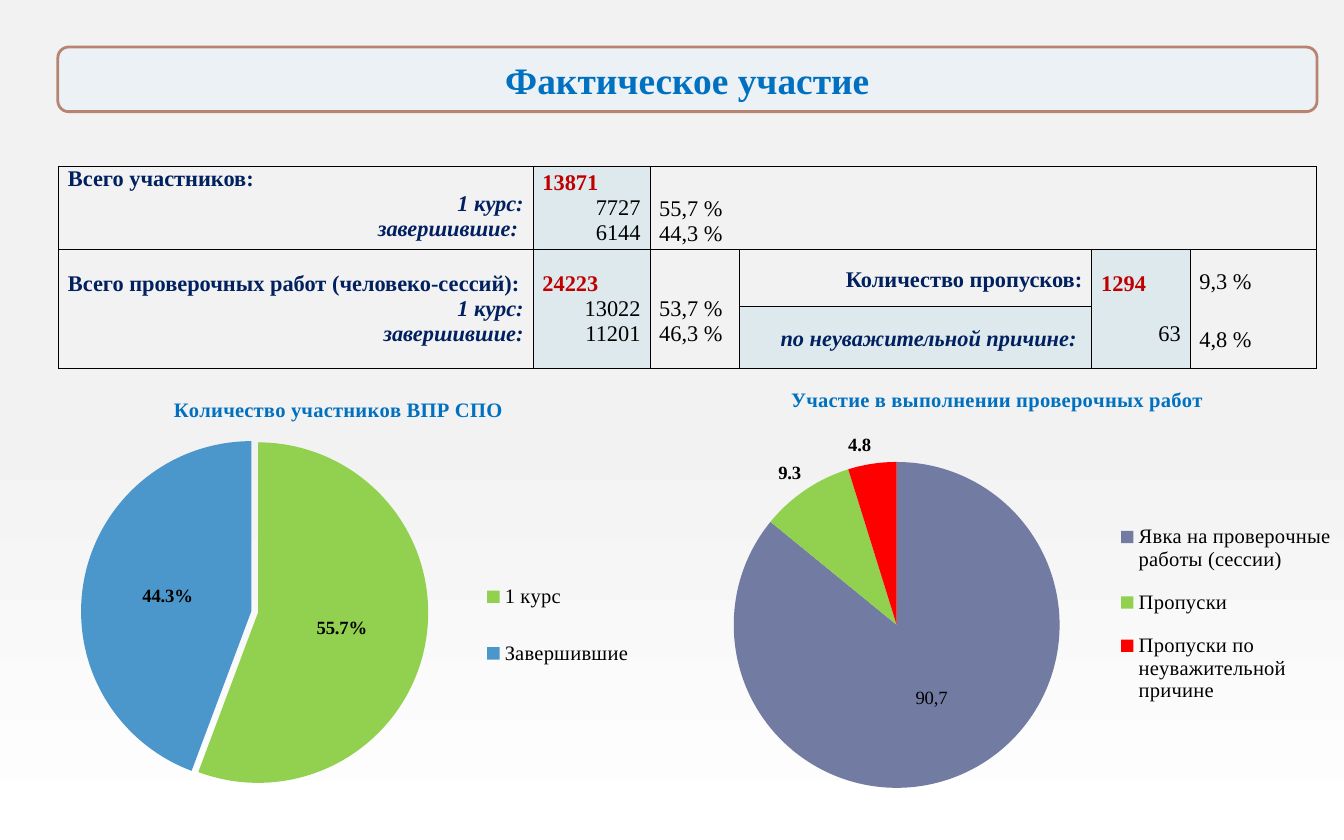
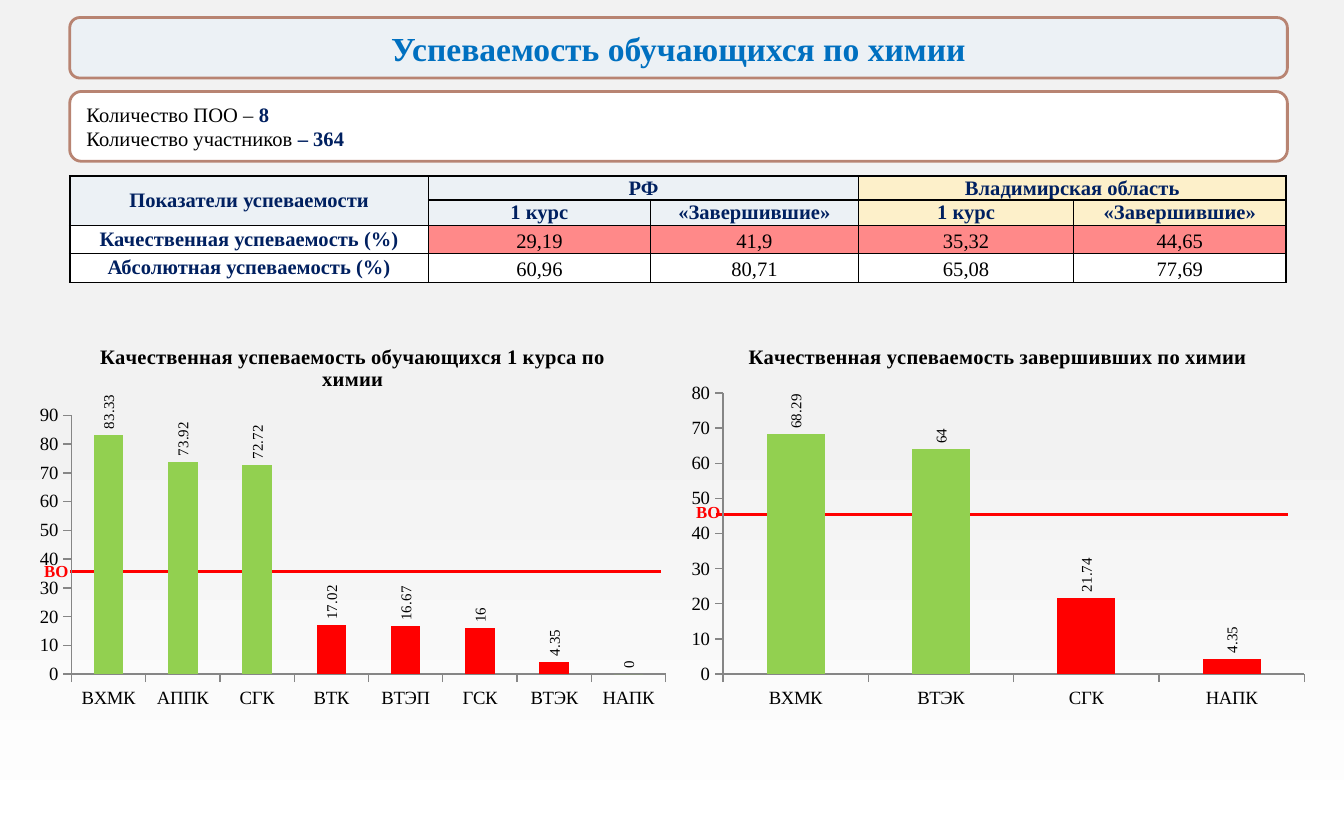
from lxml import etree
from pptx import Presentation
from pptx.chart.data import CategoryChartData
from pptx.dml.color import RGBColor
from pptx.enum.chart import XL_CHART_TYPE, XL_LABEL_POSITION, XL_LEGEND_POSITION, XL_TICK_MARK
from pptx.enum.shapes import MSO_CONNECTOR, MSO_SHAPE
from pptx.enum.text import MSO_ANCHOR, PP_ALIGN
from pptx.oxml import parse_xml
from pptx.oxml.ns import nsdecls, qn
from pptx.util import Pt

FONT = "Times New Roman"
BLUE, NAVY, CRIMSON, BLACK, WHITE = "0070C0", "002060", "C00000", "000000", "FFFFFF"
RED, GREEN, SKY, SLATE, GREY = "FF0000", "92D050", "4B97CB", "727CA3", "868686"
BAND, FRAME, TINT, CREAM, PINK = "ECF1F5", "B88472", "DDE9EC", "FDF0CA", "FF8989"
BACKDROP = [(0, "F2F2F2"), (50, "F2F2F2"), (100, WHITE)]
ALIGN = {"l": PP_ALIGN.LEFT, "c": PP_ALIGN.CENTER, "r": PP_ALIGN.RIGHT, "j": PP_ALIGN.JUSTIFY}

# Line styles: colour, bold, italic
HEAD, SUB = (NAVY, True, False), (NAVY, True, True)
TOTAL, PLAIN = (CRIMSON, True, False), (BLACK, False, False)


# Cell content: lines are (text, align, style)
def cell(lines, fill=None, span=(1, 1), **opts):
    return dict(lines=lines, fill=fill, span=span, **opts)


def group(title):
    return [(title, "j", HEAD), ("1 курс:", "r", SUB)]


def counts(total, first, last):
    return [(total, "j", TOTAL), (first, "r", PLAIN), (last, "r", PLAIN)]


def shares(*values):
    return [(v, "l", PLAIN) for v in values]


ATTENDANCE = {
    (0, 0): cell(group("Всего участников: ") + [("завершившие: ", "r", SUB)], anchor=MSO_ANCHOR.TOP),
    (0, 1): cell(counts("13871", " 7727", "6144"), TINT),
    (0, 2): cell(shares("55,7 %", "44,3 %"), span=(1, 4), top=13.8),
    (1, 0): cell(group("Всего проверочных работ (человеко-сессий):")
                 + [("завершившие:", "r", SUB)], span=(2, 1)),
    (1, 1): cell(counts("24223", "13022", "11201"), TINT, (2, 1)),
    (1, 2): cell(shares("53,7 %", "46,3 %"), span=(2, 1), top=13.8),
    (1, 3): cell([("Количество пропусков:", "r", HEAD)], spacing=1.15),
    (1, 4): cell([("1294", "l", TOTAL), ("63", "r", PLAIN)], TINT, (2, 1), gap=13.8),
    (1, 5): cell(shares("9,3 %", "4,8 %"), span=(2, 1), spacing=1.15, gap=15.9),
    (2, 3): cell([("по неуважительной причине: ", "r", SUB)], TINT, spacing=1.15),
}

REGIONS = [("РФ", BAND), ("Владимирская область", CREAM)]
COURSES = ["1 курс", "«Завершившие»"]
RATES = [
    ("Качественная успеваемость (%)", ["29,19", "41,9", "35,32", "44,65"], PINK),
    ("Абсолютная успеваемость (%)", ["60,96", "80,71", "65,08", "77,69"], WHITE),
]

# Point labels: (own text or None, position, bold)
PIES = [
    dict(title="Количество участников ВПР СПО", box=(8.6, 202.3, 345.6, 232.6),
         cats=["1 курс", "Завершившие"], vals=[0.557, 0.443], colors=[GREEN, SKY],
         fmt="0.0%", explode=2, plot=(0.1, 0.14, 0.54, 0.8), legend=(0.69, 0.4, 0.3, 0.34),
         labels=[(None, "CENTER", True)] * 2),
    dict(title="Участие в выполнении проверочных работ", box=(348.5, 196.6, 371.5, 238.3),
         cats=["Явка на проверочные работы (сессии)", "Пропуски",
               "Пропуски по неуважительной причине"],
         vals=[85.9, 9.3, 4.8], colors=[SLATE, GREEN, RED],
         fmt="General", explode=0, plot=(0.12, 0.18, 0.47, 0.8), legend=(0.67, 0.31, 0.32, 0.49),
         labels=[("90,7", "CENTER", False)] + [(None, "OUTSIDE_END", True)] * 2),
]

# average: line from x to x at y; tag: place of its label
BARS = [
    dict(title="Качественная успеваемость обучающихся 1 курса по химии",
         box=(14.4, 174.2, 349.2, 209.5), average=(37.4, 354.2, 306), tag=(16.6, 296.6),
         cats=["ВХМК", "АППК", "СГК", "ВТК", "ВТЭП", "ГСК", "ВТЭК", "НАПК"],
         vals=[83.33, 73.92, 72.72, 17.02, 16.67, 16, 4.35, 0], limit=35.32),
    dict(title="Качественная успеваемость завершивших по химии",
         box=(363.6, 174.2, 342, 209.5), average=(383.8, 689.8, 275.8), tag=(365.8, 265),
         cats=["ВХМК", "ВТЭК", "СГК", "НАПК"],
         vals=[68.29, 64, 21.74, 4.35], limit=44.65),
]


def rgb(hexa):
    return RGBColor.from_string(hexa)


def pts(values):
    return [Pt(v) for v in values]


def style_font(font, size, color=BLACK, bold=False, italic=False):
    font.name, font.size, font.bold, font.italic = FONT, Pt(size), bold, italic
    font.color.rgb = rgb(color)


def new_slide(prs):
    s = prs.slides.add_slide(prs.slide_layouts[6])
    fill = s.background.fill
    fill.gradient()
    fill.gradient_angle = 270
    stops = next(s.element.iter(qn("a:gsLst")))
    for stop in list(stops):
        stops.remove(stop)
    for pos, color in BACKDROP:
        gs = etree.SubElement(stops, qn("a:gs"), pos=str(pos * 1000))
        etree.SubElement(gs, qn("a:srgbClr"), val=color)
    return s


def add_panel(s, box, fill, paragraphs, size, align):
    """Framed rounded panel; each paragraph is a list of (text, style)."""
    sp = s.shapes.add_shape(MSO_SHAPE.ROUNDED_RECTANGLE, *pts(box))
    sp.shadow.inherit = False
    sp.fill.solid()
    sp.fill.fore_color.rgb = rgb(fill)
    sp.line.color.rgb, sp.line.width = rgb(FRAME), Pt(1.5)
    tf = sp.text_frame
    tf.word_wrap, tf.vertical_anchor = True, MSO_ANCHOR.MIDDLE
    for i, runs in enumerate(paragraphs):
        p = tf.add_paragraph() if i else tf.paragraphs[0]
        p.alignment = ALIGN[align]
        for text, style in runs:
            r = p.add_run()
            r.text = text
            style_font(r.font, size, *style)


def add_borders(tc, width):
    pr = tc.get_or_add_tcPr()
    for i, side in enumerate("LRTB"):
        pr.insert(i, parse_xml(
            f'<a:ln{side} {nsdecls("a")} w="{Pt(width)}"><a:solidFill>'
            f'<a:srgbClr val="{BLACK}"/></a:solidFill></a:ln{side}>'))


def add_grid(s, box, cols, rows, cells, size, border):
    tbl = s.shapes.add_table(len(rows), len(cols), *pts(box)).table
    tbl.first_row = tbl.horz_banding = False
    for col, width in zip(tbl.columns, cols):
        col.width = Pt(width)
    for row, height in zip(tbl.rows, rows):
        row.height = Pt(height)
    for c in tbl.iter_cells():
        c.fill.background()
        add_borders(c._tc, border)
    for (row, col), d in cells.items():
        c = tbl.cell(row, col)
        height, width = d["span"]
        if d["span"] != (1, 1):
            c.merge(tbl.cell(row + height - 1, col + width - 1))
        if d["fill"]:
            c.fill.solid()
            c.fill.fore_color.rgb = rgb(d["fill"])
        c.margin_left = c.margin_right = Pt(5)
        c.margin_top, c.margin_bottom = Pt(d.get("top", 0)), 0
        c.vertical_anchor = d.get("anchor", MSO_ANCHOR.MIDDLE)
        c.text_frame.text = "\n".join(text for text, _, _ in d["lines"])
        for i, (p, (_, align, style)) in enumerate(zip(c.text_frame.paragraphs, d["lines"])):
            p.alignment = ALIGN[align]
            p.line_spacing = d.get("spacing", 1.0)
            if i and "gap" in d:
                p.space_before = Pt(d["gap"])
            style_font(p.runs[0].font, size, *style)


def add_titled_chart(s, kind, d, color):
    data = CategoryChartData()
    data.categories = d["cats"]
    data.add_series("Series 1", d["vals"])
    chart = s.shapes.add_chart(kind, *pts(d["box"]), data).chart
    style_font(chart.font, 10)
    chart.has_legend = False
    chart.has_title = True
    tf = chart.chart_title.text_frame
    tf.text = d["title"]
    style_font(tf.paragraphs[0].runs[0].font, 11, color, True)
    chart.chart_title.include_in_layout = False
    # Transparent chart area
    area = parse_xml(f'<c:spPr {nsdecls("c", "a")}><a:noFill/><a:ln><a:noFill/></a:ln></c:spPr>')
    chart.element.find(qn("c:chart")).addnext(area)
    return chart


def place(parent, box, inner=False):
    """Manual layout of a plot area or legend, as shares of the chart."""
    old = parent.find(qn("c:layout"))
    if old is not None:
        parent.remove(old)
    values = [("layoutTarget", "inner")] if inner else []
    values += [("xMode", "edge"), ("yMode", "edge"), *zip("xywh", box)]
    tags = "".join(f'<c:{k} val="{v}"/>' for k, v in values)
    layout = parse_xml(f'<c:layout {nsdecls("c")}><c:manualLayout>{tags}</c:manualLayout></c:layout>')
    parent.insert(0 if inner else 1, layout)


def add_pie(s, d):
    chart = add_titled_chart(s, XL_CHART_TYPE.PIE, d, BLUE)
    chart.has_legend = True
    legend = chart.legend
    legend.position, legend.include_in_layout = XL_LEGEND_POSITION.RIGHT, False
    style_font(legend.font, 11)
    plot = chart.plots[0]
    plot.vary_by_categories = True
    ser = plot.series[0]
    labels = ser.data_labels
    labels.show_value, labels.show_percentage = True, False
    labels.number_format, labels.number_format_is_linked = d["fmt"], False
    style_font(labels.font, 10, bold=True)
    for i, (color, (text, position, bold)) in enumerate(zip(d["colors"], d["labels"])):
        point = ser.points[i]
        point.format.fill.solid()
        point.format.fill.fore_color.rgb = rgb(color)
        label = point.data_label
        if text:
            label.text_frame.text = text
            style_font(label.text_frame.paragraphs[0].runs[0].font, 10, bold=bold)
        else:
            style_font(label.font, 10, bold=bold)
        label.position = XL_LABEL_POSITION[position]
    if d["explode"]:
        first = ser._element.find(qn("c:dPt"))
        first.addprevious(parse_xml(f'<c:explosion {nsdecls("c")} val="{d["explode"]}"/>'))
    place(next(chart.element.iter(qn("c:plotArea"))), d["plot"], inner=True)
    place(next(chart.element.iter(qn("c:legend"))), d["legend"])


def add_bars(s, d):
    chart = add_titled_chart(s, XL_CHART_TYPE.COLUMN_CLUSTERED, d, BLACK)
    for axis in (chart.category_axis, chart.value_axis):
        axis.has_major_gridlines = False
        axis.major_tick_mark = XL_TICK_MARK.OUTSIDE
        axis.format.line.color.rgb = rgb(GREY)
        style_font(axis.tick_labels.font, 10)
    plot = chart.plots[0]
    plot.gap_width, plot.vary_by_categories = 150, False
    ser = plot.series[0]
    ser.format.fill.solid()
    ser.format.fill.fore_color.rgb = rgb(GREEN)
    for i, value in enumerate(d["vals"]):
        if 0 < value < d["limit"]:
            fill = ser.points[i].format.fill
            fill.solid()
            fill.fore_color.rgb = rgb(RED)
    labels = ser.data_labels
    labels.show_value, labels.position = True, XL_LABEL_POSITION.OUTSIDE_END
    style_font(labels.font, 8)
    next(labels._element.iter(qn("a:bodyPr"))).set("rot", "-5400000")


def add_average(s, left, right, y):
    line = s.shapes.add_connector(MSO_CONNECTOR.STRAIGHT, *pts((right, y, left, y)))
    line.line.color.rgb, line.line.width = rgb(RED), Pt(1.5)
    etree.SubElement(line._element.spPr, qn("a:effectLst"))


def add_tag(s, left, top):
    tf = s.shapes.add_textbox(*pts((left, top, 27.4, 18))).text_frame
    tf.word_wrap = False
    tf.text = "ВО"
    style_font(tf.paragraphs[0].runs[0].font, 9, RED, True)


def attendance_slide(prs):
    s = new_slide(prs)
    add_panel(s, (31, 25.2, 674.6, 34.6), BAND, [[("Фактическое участие", (BLUE, True))]], 20, "c")
    add_grid(s, (31.4, 89.3, 673.9, 108), [254.2, 62.6, 48.2, 188.6, 52.6, 67.7],
             [44.6, 30.2, 33.1], ATTENDANCE, 12, 0.5)
    for pie in PIES:
        add_pie(s, pie)


def results_slide(prs):
    s = new_slide(prs)
    # Regional average lines lie behind the charts
    for bar in reversed(BARS):
        add_average(s, *bar["average"])
    add_panel(s, (37.4, 9.4, 652.3, 32.4), BAND,
              [[("Успеваемость обучающихся по химии", (BLUE, True))]], 18, "c")
    add_panel(s, (37.4, 49, 652.3, 37.4), WHITE,
              [[("Количество ПОО – ", PLAIN), ("8", HEAD)],
               [("Количество участников ", PLAIN), ("– 364", HEAD)]], 11, "l")
    cells = {(0, 0): cell([("Показатели успеваемости", "c", HEAD)], BAND, (2, 1))}
    for i, (region, fill) in enumerate(REGIONS):
        cells[0, 1 + 2 * i] = cell([(region, "c", HEAD)], fill, (1, 2))
        for j, course in enumerate(COURSES):
            cells[1, 1 + 2 * i + j] = cell([(course, "c", HEAD)], fill)
    for row, (name, values, fill) in enumerate(RATES, 2):
        cells[row, 0] = cell([(name, "c", HEAD)], WHITE)
        for col, value in enumerate(values, 1):
            cells[row, col] = cell([(value, "c", PLAIN)], fill, spacing=1.15)
    add_grid(s, (37.4, 94.3, 652.3, 57), [192.2, 118.8, 111.6, 115.2, 113.8],
             [13, 13.5, 15, 15.5], cells, 11, 1)
    for bar in BARS:
        add_bars(s, bar)
    for bar in BARS:
        add_tag(s, *bar["tag"])


def main():
    prs = Presentation()
    prs.slide_width, prs.slide_height = Pt(720), Pt(450)
    attendance_slide(prs)
    results_slide(prs)
    prs.save("out.pptx")


if __name__ == "__main__":
    main()
